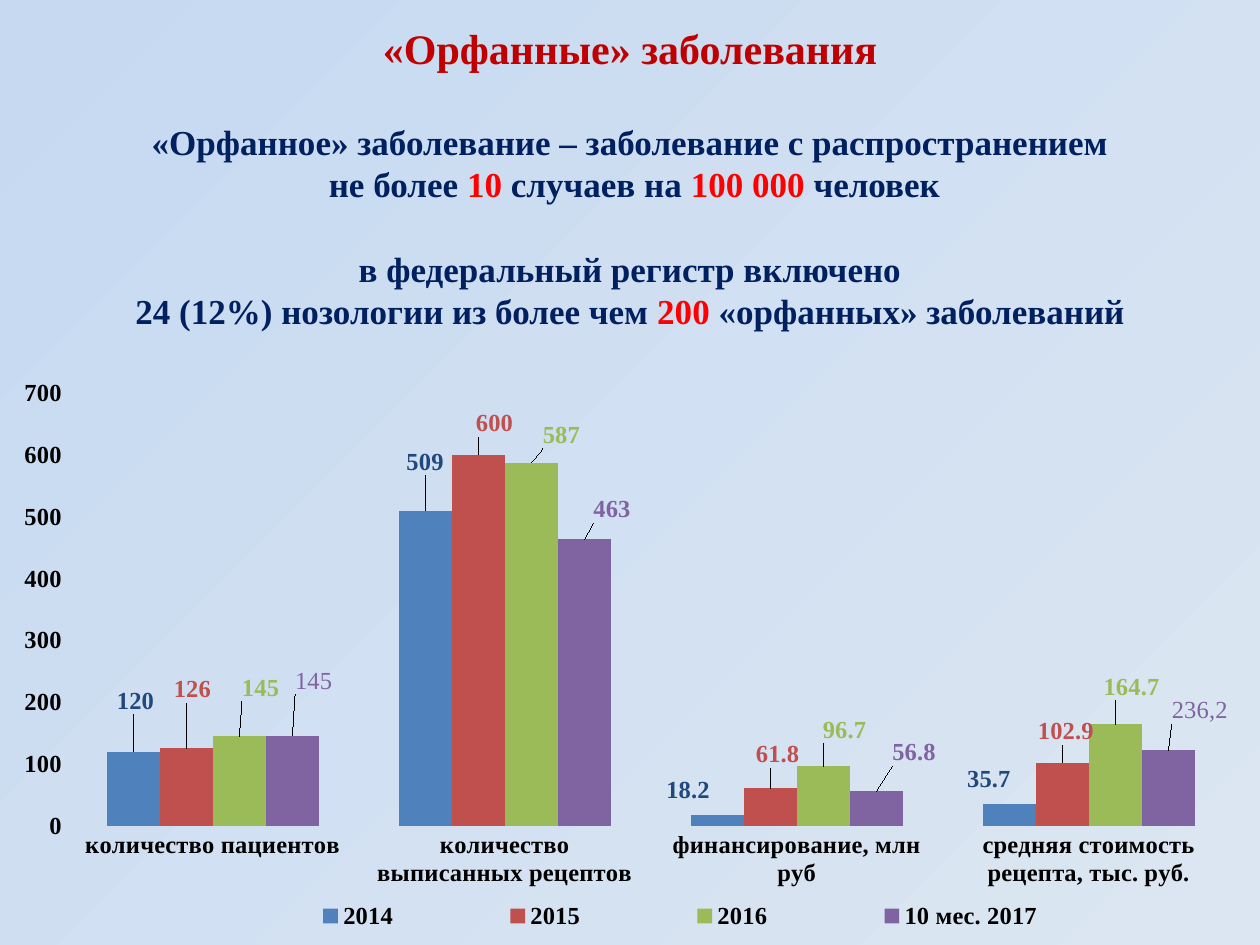
from dataclasses import dataclass

from lxml.etree import SubElement
from pptx import Presentation
from pptx.chart.data import CategoryChartData
from pptx.dml.color import RGBColor
from pptx.enum.chart import XL_CHART_TYPE as ChartType
from pptx.enum.chart import XL_LABEL_POSITION as LabelPosition
from pptx.enum.chart import XL_LEGEND_POSITION as LegendPosition
from pptx.enum.chart import XL_TICK_MARK as TickMark
from pptx.enum.text import MSO_ANCHOR as Anchor
from pptx.enum.text import MSO_AUTO_SIZE as AutoSize
from pptx.enum.text import PP_ALIGN as Align
from pptx.oxml import parse_xml
from pptx.oxml.ns import qn
from pptx.util import Inches, Pt


@dataclass(frozen=True)
class Theme:
    font: str = "Times New Roman"
    heading: str = "C00000"
    text: str = "002060"
    accent: str = "FF0000"
    axis: str = "000000"
    back_near: str = "DCE6F2"
    back_far: str = "C6D9F1"
    heading_size: int = 24
    text_size: int = 20
    chart_size: int = 14


THEME = Theme()
CHART_WIDTH, CHART_HEIGHT = 10, 4.59

DEFINITION = [
    [("«Орфанное» заболевание – заболевание с распространением", False)],
    [(" не более ", False), ("10", True), (" случаев на ", False),
     ("100 000 ", True), ("человек", False)],
]
REGISTER = [
    [("в федеральный регистр включено", False)],
    [("24 (12%) нозологии из более чем ", False), ("200", True),
     (" «орфанных» заболеваний", False)],
]

CATEGORIES = ["количество пациентов", "количество выписанных рецептов",
              "финансирование, млн руб", "средняя стоимость рецепта, тыс. руб."]


@dataclass(frozen=True)
class Period:
    name: str
    values: tuple
    fill: str
    label_color: str
    label_shifts: tuple


PERIODS = [
    Period("2014", (120, 509, 18.2, 35.7), "4F81BD", "1F497D",
           ((0.02, -0.26), (0, -0.24), (-0.23, -0.05), (-0.16, -0.05))),
    Period("2015", (126, 600, 61.8, 102.9), "C0504D", "C0504D",
           ((0.05, -0.32), (0.13, -0.1), (0.06, -0.12), (0.03, -0.1))),
    Period("2016", (145, 587, 96.7, 164.7), "9BBB59", "9BBB59",
           ((0.17, -0.24), (0.24, -0.07), (0.17, -0.14), (0.13, -0.15))),
    Period("10 мес. 2017", (146, 463, 56.8, 122.6), "8064A2", "8064A2",
           ((0.17, -0.29), (0.22, -0.09), (0.3, -0.16), (0.25, -0.17))),
]
LABEL_TEXTS = {("10 мес. 2017", 0): "145", ("10 мес. 2017", 3): "236,2"}


def style_font(font, size, color, bold=True):
    font.name = THEME.font
    font.size = Pt(size)
    font.bold = bold
    font.color.rgb = RGBColor.from_string(color)


def paint_background(slide):
    slide.background.fill.gradient()
    gradient = slide.element.find(".//" + qn("a:gradFill"))
    near, far = slide.background.fill.gradient_stops
    near.color.rgb = RGBColor.from_string(THEME.back_near)
    far.color.rgb = RGBColor.from_string(THEME.back_far)
    near.position, far.position = 0, 1
    SubElement(gradient.find(".//" + qn("a:srgbClr")), qn("a:alpha"), val="60000")
    direction = gradient.find(qn("a:lin"))
    if direction is not None:
        gradient.remove(direction)
    circle = SubElement(gradient, qn("a:path"), {"path": "circle"})
    SubElement(circle, qn("a:fillToRect"), l="100000", t="100000")


def place_text(placeholder, top, height):
    placeholder.left, placeholder.top = Inches(0), Inches(top)
    placeholder.width, placeholder.height = Inches(10), Inches(height)
    frame = placeholder.text_frame
    frame.word_wrap = True
    frame.auto_size = AutoSize.SHAPE_TO_FIT_TEXT
    frame.vertical_anchor = Anchor.TOP
    return frame


def write_line(paragraph, pieces, size, color, gap=0):
    paragraph.alignment = Align.CENTER
    paragraph.space_before = Pt(gap)
    properties = paragraph._p.get_or_add_pPr()
    properties.set("marL", "0")
    properties.set("indent", "0")
    SubElement(properties, qn("a:buNone"))
    for text, highlighted in pieces:
        run = paragraph.add_run()
        run.text = text
        style_font(run.font, size, THEME.accent if highlighted else color)


def add_heading(slide):
    frame = place_text(slide.shapes.title, 0.13, 0.5)
    write_line(frame.paragraphs[0], [("«Орфанные» заболевания", False)],
               THEME.heading_size, THEME.heading)


def add_facts(slide):
    frame = place_text(slide.placeholders[1], 0.91, 1.78)
    for number, pieces in enumerate(DEFINITION + REGISTER):
        paragraph = frame.add_paragraph() if number else frame.paragraphs[0]
        gap = 24 if number == len(DEFINITION) else 0
        write_line(paragraph, pieces, THEME.text_size, THEME.text, gap)


def set_layout(parent, position, **settings):
    for old in parent.findall(qn("c:layout")):
        parent.remove(old)
    layout = parse_xml(
        '<c:layout xmlns:c="http://schemas.openxmlformats.org/drawingml/2006/chart"/>')
    manual = SubElement(layout, qn("c:manualLayout"))
    for name, value in settings.items():
        SubElement(manual, qn("c:" + name), val=str(value))
    parent.insert(position, layout)


def style_axis(axis):
    axis.has_major_gridlines = False
    axis.major_tick_mark = axis.minor_tick_mark = TickMark.NONE
    axis.format.line.fill.background()
    style_font(axis.tick_labels.font, THEME.chart_size, THEME.axis)


def label_points(series, period):
    for index in range(len(period.values)):
        label = series.points[index].data_label
        custom_text = LABEL_TEXTS.get((period.name, index))
        if custom_text:
            run = label.text_frame.paragraphs[0].add_run()
            run.text = custom_text
            style_font(run.font, THEME.chart_size, period.label_color, bold=False)
        else:
            style_font(label.font, THEME.chart_size, period.label_color)
        label.position = LabelPosition.OUTSIDE_END


def add_period_chart(slide):
    figures = CategoryChartData()
    figures.categories = CATEGORIES
    for period in PERIODS:
        figures.add_series(period.name, period.values)
    chart = slide.shapes.add_chart(
        ChartType.COLUMN_CLUSTERED, Inches(0), Inches(2.91),
        Inches(CHART_WIDTH), Inches(CHART_HEIGHT), figures).chart
    chart.has_title = False
    style_font(chart.font, THEME.chart_size, THEME.axis)
    style_axis(chart.category_axis)
    style_axis(chart.value_axis)
    chart.value_axis.minimum_scale = 0
    chart.value_axis.maximum_scale = 700
    chart.value_axis.major_unit = 100

    plot = chart.plots[0]
    plot.vary_by_categories = False
    plot.gap_width, plot.overlap = 150, 0
    for series, period in zip(plot.series, PERIODS):
        series.format.fill.solid()
        series.format.fill.fore_color.rgb = RGBColor.from_string(period.fill)
        label_points(series, period)
    shifts = [shift for period in PERIODS for shift in period.label_shifts]
    for label, (right, down) in zip(chart.element.iter(qn("c:dLbl")), shifts):
        set_layout(label, 1, x=right / CHART_WIDTH, y=down / CHART_HEIGHT)

    chart.has_legend = True
    chart.legend.position = LegendPosition.BOTTOM
    chart.legend.include_in_layout = False
    style_font(chart.legend.font, THEME.chart_size, THEME.axis)
    set_layout(chart.element.find(".//" + qn("c:legend")), 1, xMode="edge",
               yMode="edge", x=0.17, y=0.91, w=0.74, h=0.08)
    set_layout(chart.element.find(".//" + qn("c:plotArea")), 0, layoutTarget="inner",
               xMode="edge", yMode="edge", x=0.053, y=0.045, w=0.927, h=0.75)


def main():
    deck = Presentation()
    deck.slide_width, deck.slide_height = Inches(10), Inches(7.5)
    slide = deck.slides.add_slide(deck.slide_layouts[1])
    paint_background(slide)
    add_facts(slide)
    add_period_chart(slide)
    add_heading(slide)
    deck.save("out.pptx")


if __name__ == "__main__":
    main()
